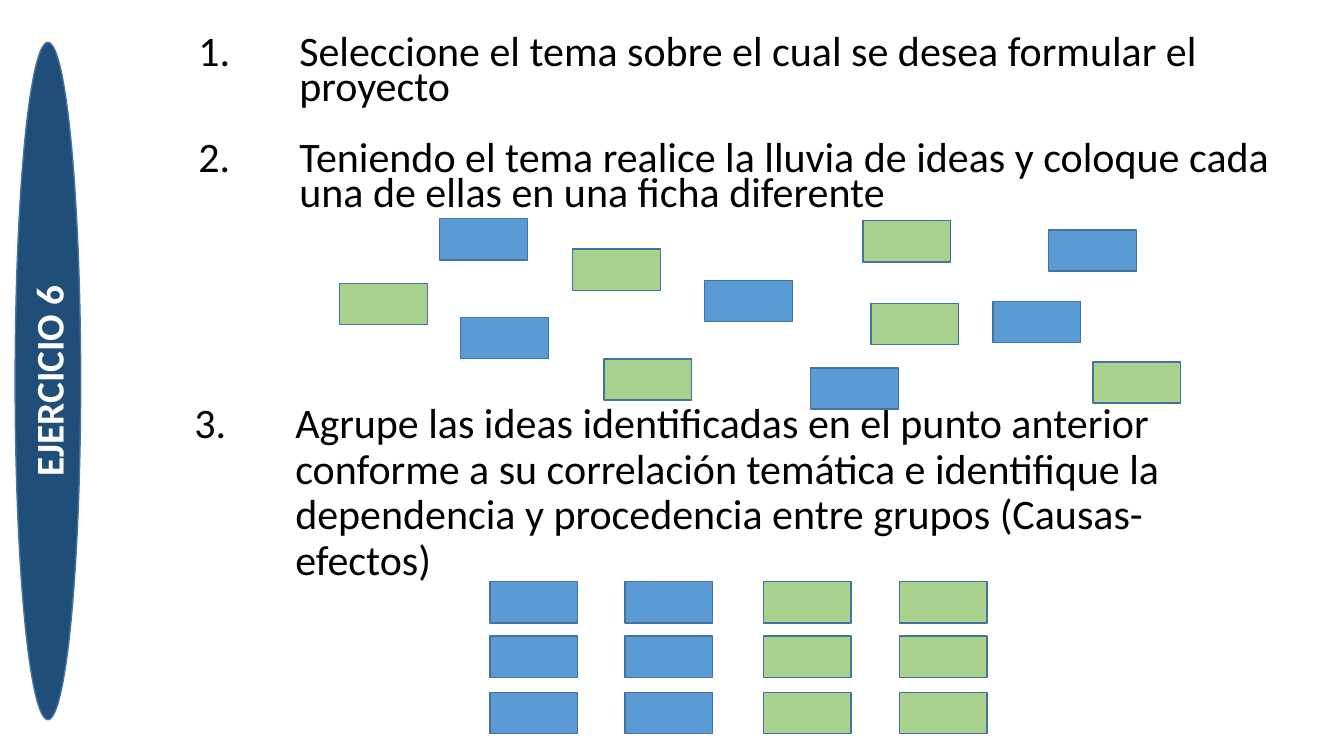
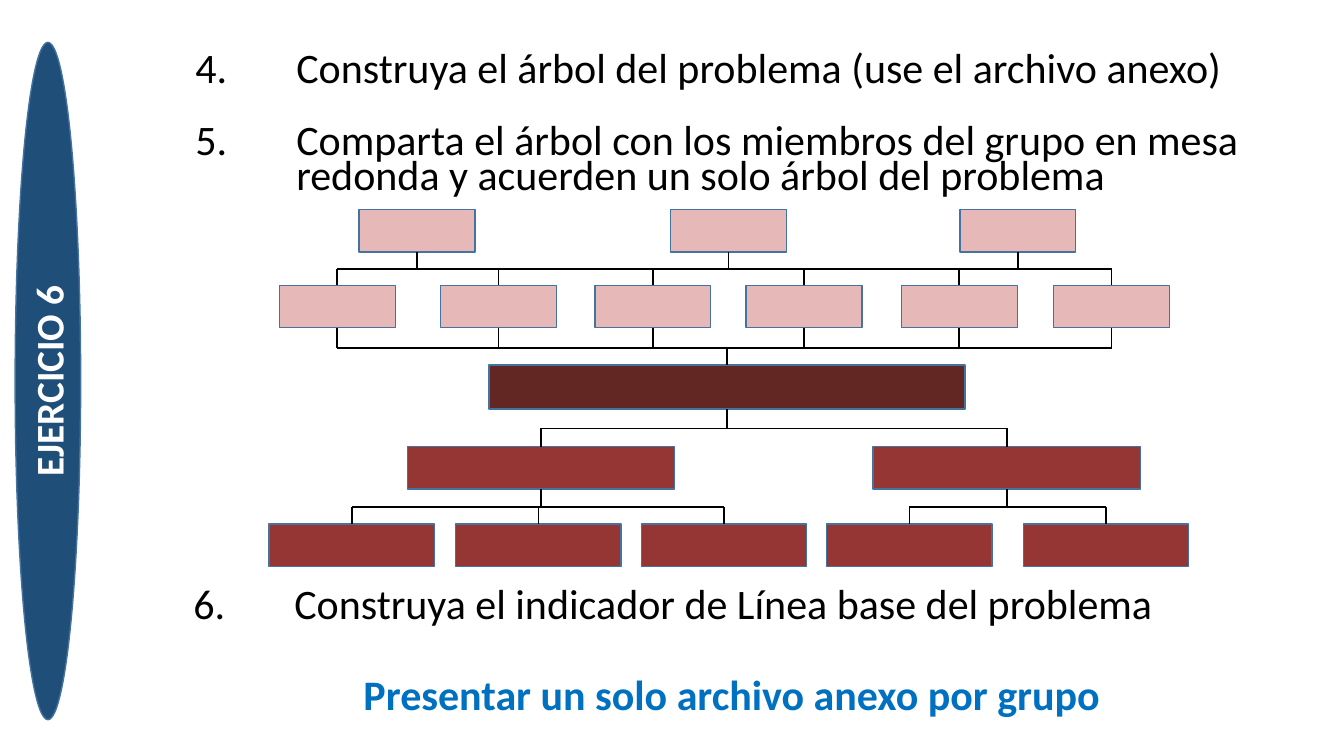
from lxml.etree import SubElement
from pptx import Presentation
from pptx.dml.color import RGBColor
from pptx.enum.shapes import MSO_CONNECTOR as Connector, MSO_SHAPE as Shape
from pptx.enum.text import MSO_ANCHOR as Anchor, PP_ALIGN as Align
from pptx.oxml.ns import qn
from pptx.util import Inches, Pt

BLUE, GREEN = "5B9BD5", "A9D18E"
PINK, RED, MAROON = "E6B8B7", "963634", "632723"
NAVY, OUTLINE, ACCENT = "1F4E79", "43739E", "0070C0"
BLACK, WHITE = "000000", "FFFFFF"
TOP, BOTTOM = 0, 2
BODY_SIZE = 30
LINE_HEIGHT = 36.6
CARD = (0.87, 0.41)


def color(value):
    """Turn a hex string into a colour."""
    return RGBColor.from_string(value)


def center(box):
    """Give the horizontal middle of a box."""
    return box.left + box.width // 2


class ExerciseDeck:
    """Holds the deck style and the slide being drawn."""

    def __init__(self):
        """Start an empty widescreen deck."""
        self.deck = Presentation()
        self.deck.slide_width = Inches(13.33)
        self.deck.slide_height = Inches(7.5)
        self.page = None

    def add_page(self):
        """Add a slide with the vertical title ellipse."""
        self.page = self.deck.slides.add_slide(self.deck.slide_layouts[6])
        banner = self.shape(0.15, 0.42, 0.65, 6.72, NAVY, Shape.OVAL)
        banner.element.txBody.bodyPr.set("vert", "vert270")
        banner.text_frame.vertical_anchor = Anchor.MIDDLE
        para = banner.text_frame.paragraphs[0]
        self.fill_text(para, "EJERCICIO 6", WHITE, {"size": Pt(28), "bold": True}, {"alignment": Align.CENTER})

    def fill_text(self, para, text, ink, font_format, para_format):
        """Fill a paragraph with one formatted run."""
        for name, value in para_format.items():
            setattr(para, name, value)
        span = para.add_run()
        span.text = text
        for name, value in {"name": "Calibri", **font_format}.items():
            setattr(span.font, name, value)
        span.font.color.rgb = color(ink)

    def shape(self, left, top, width, height, fill, kind=Shape.RECTANGLE):
        """Draw a filled, outlined shape."""
        box = self.page.shapes.add_shape(kind, Inches(left), Inches(top), Inches(width), Inches(height))
        box.shadow.inherit = False
        box.fill.solid()
        box.fill.fore_color.rgb = color(fill)
        box.line.color.rgb = color(OUTLINE)
        box.line.width = Pt(1)
        return box

    def row(self, lefts, top, size, fill):
        """Draw equal boxes at the given left edges."""
        return [self.shape(left, top, *size, fill) for left in lefts]

    def steps(self, left, top, height, texts, start, spacing, closing=None):
        """Add numbered steps, and a centred closing line if given."""
        box = self.page.shapes.add_textbox(Inches(left), Inches(top), Inches(10.88), Inches(height))
        frame = box.text_frame
        frame.word_wrap = True
        frame.vertical_anchor = Anchor.MIDDLE
        lines = texts + ([closing] if closing else [])
        for index, text in enumerate(lines):
            para = frame.add_paragraph() if index else frame.paragraphs[0]
            is_closing = text == closing
            para_format = {"line_spacing": spacing, "space_before": Pt(LINE_HEIGHT * spacing if index else 0)}
            if is_closing:
                para_format["alignment"] = Align.CENTER
            else:
                properties = para._p.get_or_add_pPr()
                properties.set("marL", str(Inches(1)))
                properties.set("indent", str(-Inches(1)))
                SubElement(properties, qn("a:buAutoNum"), type="arabicPeriod", startAt=str(start))
            font_format = {"size": Pt(BODY_SIZE), "bold": is_closing}
            self.fill_text(para, text, ACCENT if is_closing else BLACK, font_format, para_format)

    def line(self, start_x, start_y, end_x, end_y):
        """Draw a thin black line."""
        link = self.page.shapes.add_connector(Connector.STRAIGHT, start_x, start_y, end_x, end_y)
        SubElement(link.element.spPr, qn("a:effectLst"))
        link.line.color.rgb = color(BLACK)
        link.line.width = Pt(1.25)
        return link

    def branch(self, parents, children, level):
        """Join the boxes above and below through a horizontal line."""
        level = Inches(level)
        for boxes, side in ((parents, BOTTOM), (children, TOP)):
            for box in boxes:
                edge = box.top + (box.height if side == BOTTOM else 0)
                self.line(center(box), edge, center(box), level).begin_connect(box, side)
        middles = [center(box) for box in parents + children]
        self.line(min(middles), level, max(middles), level)


def ideas_slide(deck):
    """Build the brainstorm and grouping steps."""
    deck.add_page()
    deck.steps(1.87, 0.5, 1.51, [
        "Seleccione el tema sobre el cual se desea formular el proyecto",
        "Teniendo el tema realice la lluvia de ideas y coloque cada una de ellas en una ficha diferente",
    ], 1, 0.7)
    deck.steps(1.83, 4.17, 1.45, [
        "Agrupe las ideas identificadas en el punto anterior conforme a su correlación temática "
        "e identifique la dependencia y procedencia entre grupos (Causas-efectos)",
    ], 3, 0.9)
    for top in (5.77, 6.31, 6.87):
        deck.row((4.86, 6.2), top, CARD, BLUE)
        deck.row((7.57, 8.92), top, CARD, GREEN)
    scattered = {
        BLUE: [(9.85, 2.99), (4.57, 3.15), (8.04, 3.65), (4.36, 2.17), (6.99, 2.78), (10.4, 2.28)],
        GREEN: [(10.84, 3.59), (5.68, 2.47), (8.56, 2.19), (5.99, 3.56), (3.37, 2.81), (8.64, 3.01)],
    }
    for fill, places in scattered.items():
        for left, top in places:
            deck.shape(left, top, *CARD, fill)


def tree_slide(deck):
    """Build the problem tree steps."""
    deck.add_page()
    deck.steps(1.84, 0.5, 1.51, [
        "Construya el árbol del problema (use el archivo anexo)",
        "Comparta el árbol con los miembros del grupo en mesa redonda y acuerden un solo árbol del problema",
    ], 4, 0.7)
    deck.steps(1.82, 5.68, 1.57, ["Construya el indicador de Línea base del problema"], 6, 0.9,
               "Presentar un solo archivo anexo por grupo")
    effect_size = (1.15, 0.42)
    final_effects = deck.row((3.56, 6.65, 9.52), 2.08, effect_size, PINK)
    direct_effects = deck.row((2.77, 4.37, 5.9, 7.4, 8.94, 10.45), 2.83, effect_size, PINK)
    problem = deck.row((4.85,), 3.62, (4.72, 0.44), MAROON)
    causes = deck.row((4.04, 8.66), 4.43, (2.65, 0.42), RED)
    root_causes = deck.row((2.67, 4.52, 6.36, 8.2, 10.15), 5.2, (1.64, 0.42), RED)
    deck.branch(final_effects, direct_effects, 2.67)
    deck.branch(direct_effects, problem, 3.45)
    deck.branch(problem, causes, 4.25)
    deck.branch(causes[:1], root_causes[:3], 5.03)
    deck.branch(causes[1:], root_causes[3:], 5.03)


def main():
    """Build and save the deck."""
    exercise = ExerciseDeck()
    ideas_slide(exercise)
    tree_slide(exercise)
    exercise.deck.save("out.pptx")


if __name__ == "__main__":
    main()
